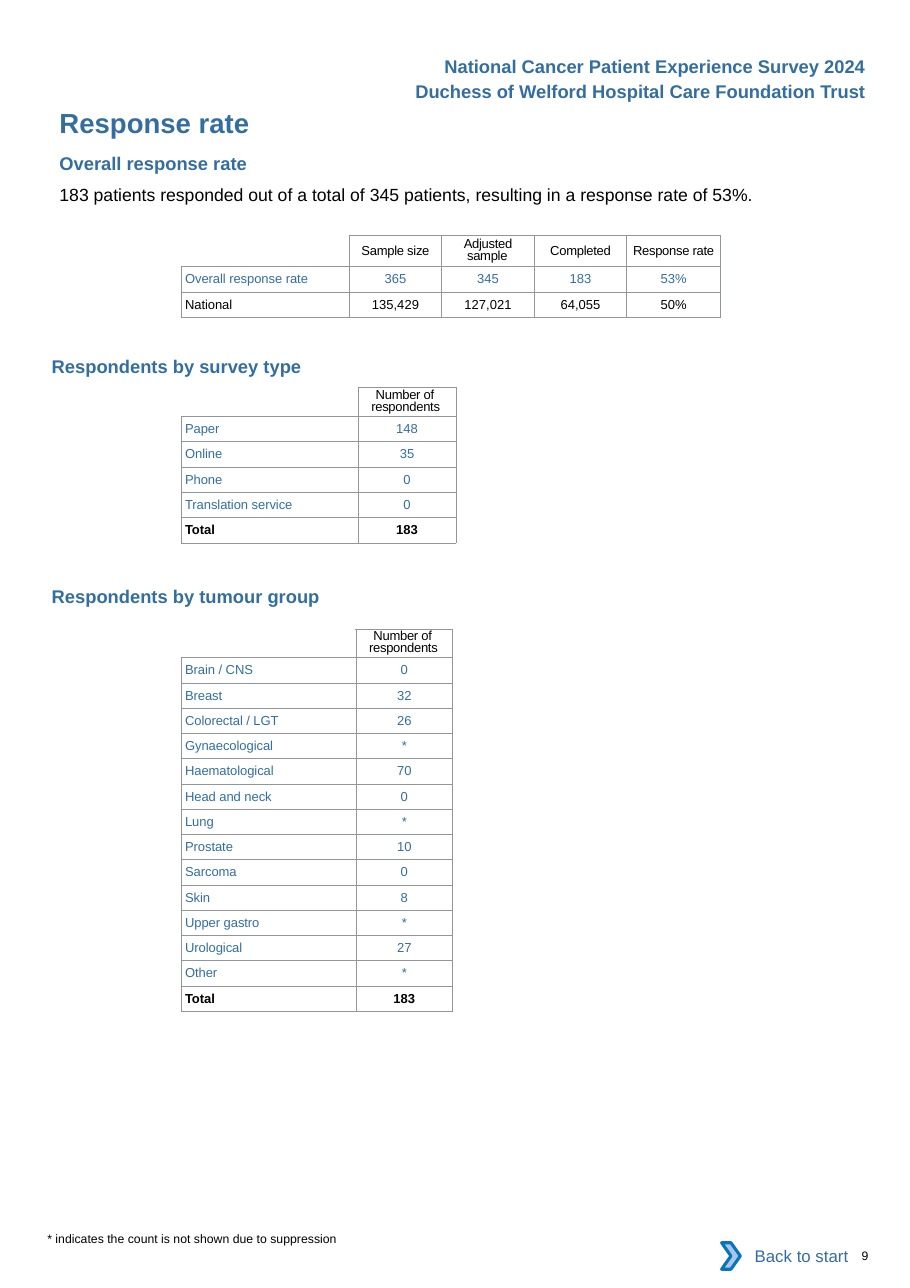
from lxml import etree
from pptx import Presentation
from pptx import util as u
from pptx.dml.color import RGBColor
from pptx.enum import shapes, text
from pptx.oxml.ns import qn

BLUE = RGBColor(0x33, 0x6E, 0x9F)
BLACK = RGBColor(0, 0, 0)
WHITE = RGBColor(0xFF, 0xFF, 0xFF)
GREY = RGBColor(0x93, 0x95, 0x98)
CHEVRON_FILL = RGBColor(0xA8, 0xC7, 0xE9)
CHEVRON_LINE = RGBColor(0x0A, 0x74, 0xBB)

SCALE = 9144  # EMU in one px, 100 px to the inch
LEFT, CENTER, RIGHT = text.PP_ALIGN.LEFT, text.PP_ALIGN.CENTER, text.PP_ALIGN.RIGHT
TOP, MIDDLE = text.MSO_ANCHOR.TOP, text.MSO_ANCHOR.MIDDLE
NO_TABLE_STYLE = "{2D5ABB26-0587-4C30-8999-92F81FD0307C}"

RATES = [
    ("", "Sample size", "Adjusted sample", "Completed", "Response rate"),
    ("Overall response rate", "365", "345", "183", "53%"),
    ("National", "135,429", "127,021", "64,055", "50%"),
]
SURVEY_TYPES = [
    ("", "Number of respondents"),
    ("Paper", "148"),
    ("Online", "35"),
    ("Phone", "0"),
    ("Translation service", "0"),
    ("Total", "183"),
]
TUMOUR_GROUPS = [
    ("", "Number of respondents"),
    ("Brain / CNS", "0"),
    ("Breast", "32"),
    ("Colorectal / LGT", "26"),
    ("Gynaecological", "*"),
    ("Haematological", "70"),
    ("Head and neck", "0"),
    ("Lung", "*"),
    ("Prostate", "10"),
    ("Sarcoma", "0"),
    ("Skin", "8"),
    ("Upper gastro", "*"),
    ("Urological", "27"),
    ("Other", "*"),
    ("Total", "183"),
]
# Left margin and first-line indent of the headers that take two lines
HEADER_INDENTS = {"Adjusted sample": (23, -3), "Number of respondents": (12, 4)}


def px(*lengths):
    return [u.Emu(length * SCALE) for length in lengths]


def write(frame, words, size=12, color=BLUE, bold=False, align=LEFT,
          spacing=0, indent=(0, 0), leading=None):
    """Set the words of a text frame; size, spacing and leading are points."""
    para = frame.paragraphs[0]
    para.alignment = align
    if leading:
        para.line_spacing = u.Pt(leading)
    margin, first_line = px(*indent)
    properties = para._p.get_or_add_pPr()
    properties.set("marL", str(margin))
    properties.set("indent", str(first_line))
    span = para.add_run()
    span.text = words
    font = span.font
    font.name, font.size, font.bold = "Arial", u.Pt(size), bold
    font.color.rgb = color
    if spacing:
        span._r.get_or_add_rPr().set("spc", str(round(spacing * 100)))


def set_borders(cell, sides):
    """Draw the named sides (of L, R, T, B) and clear the others."""
    properties = cell._tc.get_or_add_tcPr()
    for place, side in enumerate("LRTB"):
        line = etree.Element(qn("a:ln" + side), w=str(u.Pt(0.5)))
        if side in sides:
            fill = etree.SubElement(line, qn("a:solidFill"))
            etree.SubElement(fill, qn("a:srgbClr"), val=str(GREY))
        else:
            etree.SubElement(line, qn("a:noFill"))
        properties.insert(place, line)


class Report:
    def __init__(self, page):
        self.page = page

    def place(self, box, left, top, width, height, words, **style):
        box.left, box.top, box.width, box.height = px(left, top, width, height)
        frame = box.text_frame
        frame.margin_left = frame.margin_right = 0
        frame.margin_top = frame.margin_bottom = 0
        frame.word_wrap = True
        frame.auto_size = text.MSO_AUTO_SIZE.NONE
        frame.vertical_anchor = TOP
        write(frame, words, **style)

    def title(self, *bounds, words):
        self.place(self.page.shapes.title, *bounds, words,
                   size=18, bold=True, indent=(1, 0))

    def label(self, *bounds, words, **style):
        box = self.page.shapes.add_textbox(0, 0, 0, 0)
        self.place(box, *bounds, words, **style)

    def table(self, left, top, height, columns, header, rows):
        """Add a table whose rows below the header share the height equally."""
        frame = self.page.shapes.add_table(
            len(rows), len(columns), *px(left, top, sum(columns), height))
        table = frame.table
        table._tbl.tblPr.find(qn("a:tableStyleId")).text = NO_TABLE_STYLE
        table.first_row = table.horz_banding = False
        for column, width in zip(table.columns, px(*columns)):
            column.width = width
        body = (height - header) * SCALE // (len(rows) - 1)
        for number, values in enumerate(rows):
            table.rows[number].height = body if number else header * SCALE
            for position, words in enumerate(values):
                cell = table.cell(number, position)
                cell.margin_left = cell.margin_right = 0
                cell.margin_top = cell.margin_bottom = 0
                cell.vertical_anchor = MIDDLE
                cell.fill.background()
                set_borders(cell, "LRTB" if number or position else "RB")
                if not words:
                    # A small font keeps the empty corner from stretching its row
                    para = cell.text_frame.paragraphs[0]
                    etree.SubElement(para._p, qn("a:endParaRPr"), sz="850")
                    continue
                style = {"align": CENTER}
                if position == 0:
                    style = {"indent": (3, 0), "spacing": -0.05}
                elif number == 0:
                    style["spacing"] = -0.2
                    if words in HEADER_INDENTS:
                        style.update(align=LEFT, leading=7.6,
                                     indent=HEADER_INDENTS[words])
                black = number in (0, len(rows) - 1)
                write(cell.text_frame, words, size=8.5,
                      color=BLACK if black else BLUE,
                      bold=values[0] == "Total", **style)

    def shape(self, group, kind, *bounds, fill, line=None):
        shape = group.shapes.add_shape(kind, *px(*bounds))
        shape.shadow.inherit = False
        shape.fill.solid()
        shape.fill.fore_color.rgb = fill
        if line:
            shape.line.color.rgb = line
            shape.line.width = u.Pt(2)
        else:
            shape.line.fill.background()
        return shape

    def back_button(self):
        group = self.page.shapes.add_group_shape()
        kinds = shapes.MSO_SHAPE
        button = self.shape(group, kinds.RECTANGLE, 662, 1119, 118, 42, fill=WHITE)
        button.text_frame.vertical_anchor = MIDDLE
        write(button.text_frame, "Back to start", size=11, align=RIGHT)
        self.shape(group, kinds.CHEVRON, 655, 1128, 17, 24,
                   fill=CHEVRON_FILL, line=CHEVRON_LINE)


def main():
    deck = Presentation()
    deck.slide_width, deck.slide_height = px(826, 1169)
    report = Report(deck.slides.add_slide(deck.slide_layouts[5]))

    heading = {"bold": True, "indent": (1, 0)}
    banner = {"bold": True, "align": RIGHT}
    report.label(356, 50, 430, 20, words="National Cancer Patient Experience Survey 2024", **banner)
    report.label(356, 73, 430, 20, words="Duchess of Welford Hospital Care Foundation Trust", **banner)

    report.title(53, 96, 413, 30, words="Response rate")
    report.label(53, 138, 413, 20, words="Overall response rate", **heading)
    report.label(53, 167, 720, 19, size=11.5, color=BLACK, indent=(1, 0),
                 words="183 patients responded out of a total of 345 patients, "
                       "resulting in a response rate of 53%.")
    report.table(165, 214, 74, [152, 84, 84, 84, 85], 28, RATES)

    report.label(46, 322, 300, 20, words="Respondents by survey type", **heading)
    report.table(165, 352, 141, [160, 89], 26, SURVEY_TYPES)

    report.label(46, 531, 300, 20, words="Respondents by tumour group", **heading)
    report.table(165, 571, 347, [158, 88], 26, TUMOUR_GROUPS)

    report.label(42, 1118, 300, 13, size=8, color=BLACK, indent=(1, 0),
                 words="* indicates the count is not shown due to suppression")
    report.back_button()
    report.label(772, 1133, 51, 13, words="9", size=8, color=BLACK, indent=(10, 0))
    deck.save("out.pptx")


if __name__ == "__main__":
    main()
